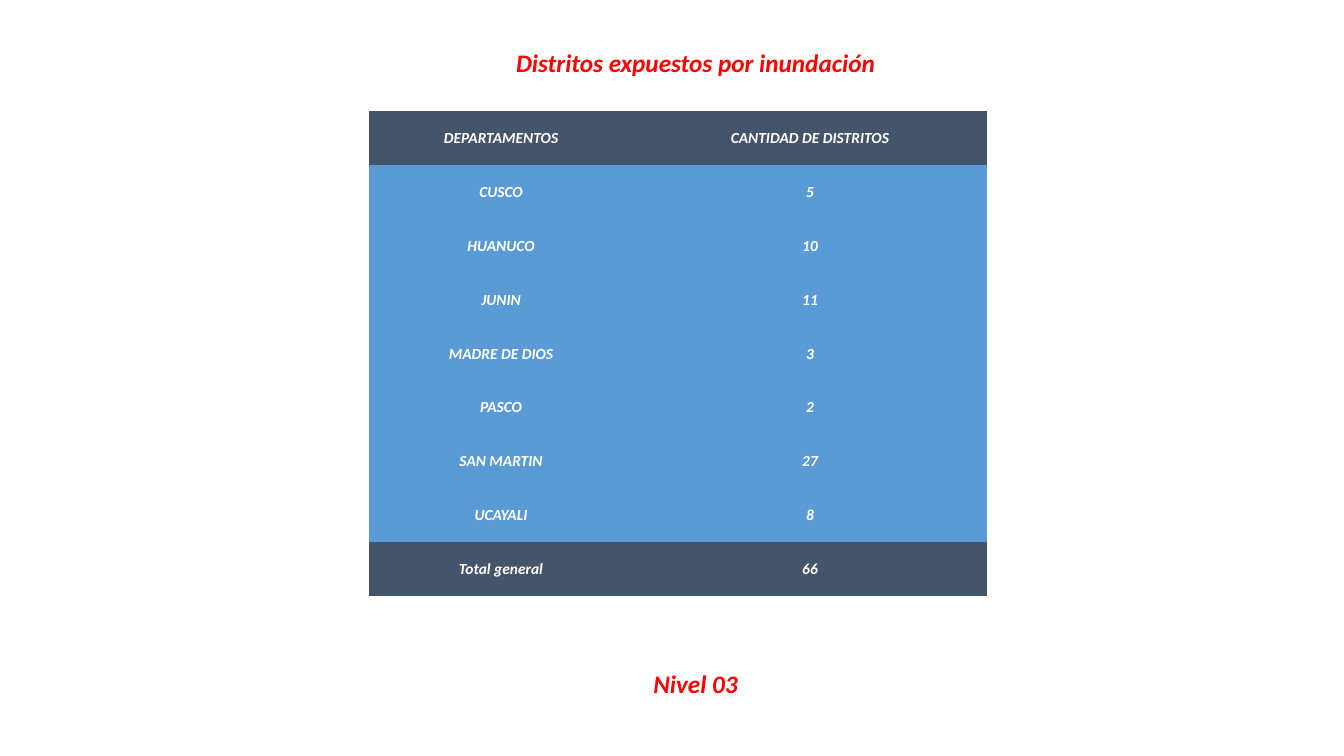
from pptx import Presentation
from pptx import util as u
from pptx.dml import color
from pptx.enum import text
from pptx.oxml import ns

COLORS = {"title": "FF0000", "cell": "FFFFFF", "dark": "44546A", "blue": "5B9BD5"}
PLAIN_TABLE_STYLE = "{2D5ABB26-0587-4C30-8999-92F81FD0307C}"
HEADER = ("DEPARTAMENTOS", "CANTIDAD DE DISTRITOS")
DISTRICTS = {
    "CUSCO": 5,
    "HUANUCO": 10,
    "JUNIN": 11,
    "MADRE DE DIOS": 3,
    "PASCO": 2,
    "SAN MARTIN": 27,
    "UCAYALI": 8,
}


def write(frame, words, *, size, hue):
    """Put one centred bold italic line into a text frame."""
    para = frame.paragraphs[0]
    para.alignment = text.PP_ALIGN.CENTER
    span = para.add_run()
    span.text = words
    font = span.font
    font.name, font.size = "Calibri", u.Pt(size)
    font.bold = font.italic = True
    font.color.rgb = color.RGBColor.from_string(COLORS[hue])


def add_label(page, words, left, top, width, *, wrap):
    """Add a red heading box."""
    box = page.shapes.add_textbox(*map(u.Inches, (left, top, width, 0.4)))
    box.text_frame.word_wrap = wrap
    box.text_frame.auto_size = text.MSO_AUTO_SIZE.SHAPE_TO_FIT_TEXT
    write(box.text_frame, words, size=18, hue="title")


def fill_cell(cell, words, *, fill):
    """Colour a table cell and write its text."""
    cell.fill.solid()
    cell.fill.fore_color.rgb = color.RGBColor.from_string(COLORS[fill])
    cell.vertical_anchor = text.MSO_ANCHOR.MIDDLE
    cell.margin_left = cell.margin_top = cell.margin_right = u.Inches(0.01)
    cell.margin_bottom = 0
    write(cell.text_frame, words, size=11, hue="cell")


def add_district_table(page, rows, left, top, widths, height):
    """Add the table with dark first and last rows."""
    frame = page.shapes.add_table(
        len(rows), len(widths), *map(u.Inches, (left, top, sum(widths), height))
    )
    table = frame.table
    table.first_row = table.horz_banding = False
    next(frame.element.iter(ns.qn("a:tableStyleId"))).text = PLAIN_TABLE_STYLE
    for column, width in zip(table.columns, widths):
        column.width = u.Inches(width)
    for r, row in enumerate(rows):
        fill = "dark" if r in (0, len(rows) - 1) else "blue"
        for c, value in enumerate(row):
            fill_cell(table.cell(r, c), str(value), fill=fill)


def main():
    """Build and save the slide."""
    deck = Presentation()
    deck.slide_width, deck.slide_height = u.Inches(13.33), u.Inches(7.5)
    page = deck.slides.add_slide(deck.slide_layouts[6])
    add_label(page, "Distritos expuestos por inundación", 5, 0.42, 3.8, wrap=False)
    add_label(page, "Nivel 03", 6.3, 6.58, 1.2, wrap=True)
    total = ("Total general", sum(DISTRICTS.values()))
    rows = [HEADER, *DISTRICTS.items(), total]
    add_district_table(page, rows, 3.66, 1.1, (2.62, 3.51), 4.81)
    deck.save("out.pptx")


if __name__ == "__main__":
    main()
